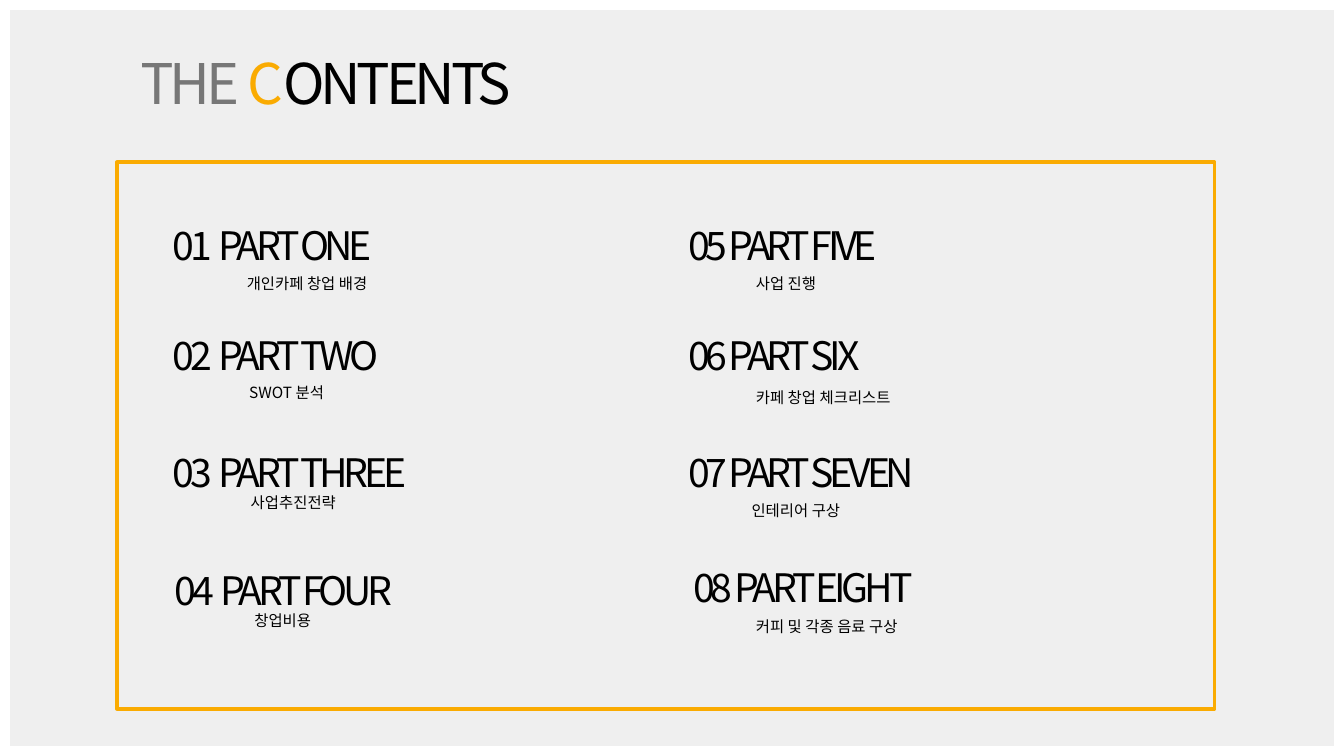
from lxml import etree
from pptx import Presentation
from pptx import util as u
from pptx.dml.color import RGBColor
from pptx.enum import shapes, text
from pptx.oxml.ns import qn

BLACK = RGBColor(0x00, 0x00, 0x00)
WHITE = RGBColor(0xFF, 0xFF, 0xFF)
ORANGE = RGBColor(0xFA, 0xAB, 0x01)
GREY = RGBColor(0xEF, 0xEF, 0xEF)
FONT = "Noto Sans CJK KR"
WIDTH, HEIGHT = 33.87, 19.05
PANEL = (2.95, 4.09, 27.66, 13.77)  # left, top, width, height in cm

# Number, heading, caption, heading (x, y) in its column, caption offset (x, y)
LEFT_PARTS = [
    ("01", "PART ONE", "개인카페 창업 배경", (0, 1.37), (1.86, 1.32)),
    ("02", "PART TWO", "SWOT 분석", (0, 4.14), (1.92, 1.3)),
    ("03", "PART THREE", "사업추진전략", (0, 7.08), (1.96, 1.12)),
    ("04", "PART FOUR", "창업비용", (0.05, 10.06), (2, 1.12)),
]
RIGHT_PARTS = [
    ("05", "PART FIVE", "사업 진행", (0, 1.37), (1.71, 1.32)),
    ("06", "PART SIX", "카페 창업 체크리스트", (0, 4.14), (1.71, 1.42)),
    ("07", "PART SEVEN", "인테리어 구상", (0, 7.07), (1.6, 1.35)),
    ("08", "PART EIGHT", "커피 및 각종 음료 구상", (0.13, 9.98), (1.58, 1.35)),
]


def format_span(span, size, color=BLACK, spacing=0):
    span.font.size = u.Pt(size)
    span.font.name = FONT
    span.font.color.rgb = color
    props = span.font._element
    etree.SubElement(props, qn("a:ea")).set("typeface", FONT)
    if spacing:
        props.set("spc", str(spacing * 100))


def add_text(page, left, top, width, height, words, size, spacing=0):
    box = page.shapes.add_textbox(u.Cm(left), u.Cm(top), u.Cm(width), u.Cm(height))
    box.text_frame.word_wrap = True
    para = box.text_frame.paragraphs[0]
    para.text = words
    format_span(para.runs[0], size, spacing=spacing)
    return para


def add_title(page, left, top, width, height):
    title = page.shapes.title
    title.left, title.top = u.Cm(left), u.Cm(top)
    title.width, title.height = u.Cm(width), u.Cm(height)
    frame = title.text_frame
    frame.word_wrap = True
    frame.auto_size = text.MSO_AUTO_SIZE.NONE
    frame.vertical_anchor = text.MSO_ANCHOR.TOP
    para = frame.paragraphs[0]
    para.alignment = text.PP_ALIGN.CENTER
    for words, color in (("THE ", BLACK), ("C", ORANGE), ("ONTENTS", BLACK)):
        span = para.add_run()
        span.text = words
        format_span(span, 40, color, spacing=-3)
    # The first word is half transparent
    tint = para.runs[0].font._element.find(".//" + qn("a:srgbClr"))
    etree.SubElement(tint, qn("a:alpha")).set("val", "50000")


def add_panel(page, left, top, width, height):
    panel = page.shapes.add_shape(shapes.MSO_SHAPE.RECTANGLE, u.Cm(left), u.Cm(top),
                                  u.Cm(width), u.Cm(height))
    panel.shadow.inherit = False
    panel.fill.background()
    panel.line.color.rgb = ORANGE
    panel.line.width = u.Pt(2.75)


def add_column(page, left, top, parts, number_width):
    for number, heading, caption, (x, y), (dx, dy) in parts:
        para = add_text(page, left + x, top + y, 8.2, 1.45,
                        f"{number}\t{heading}", 28, spacing=-3)
        # A tab stop sets the gap after the number
        stops = etree.SubElement(para._p.get_or_add_pPr(), qn("a:tabLst"))
        stop = etree.SubElement(stops, qn("a:tab"))
        stop.set("pos", str(u.Cm(number_width)))
        stop.set("algn", "l")
        add_text(page, left + x + dx, top + y + dy, 4.8, 0.74, caption, 11)


def add_border(page, left, top, width, height):
    border = page.shapes.add_shape(shapes.MSO_SHAPE.FRAME, u.Cm(left), u.Cm(top),
                                   u.Cm(width), u.Cm(height))
    border.adjustments[0] = 0.013
    border.shadow.inherit = False
    border.fill.solid()
    border.fill.fore_color.rgb = WHITE
    border.line.fill.background()


def build_contents(deck):
    page = deck.slides.add_slide(deck.slide_layouts[5])
    page.background.fill.solid()
    page.background.fill.fore_color.rgb = GREY
    left, top, _, _ = PANEL
    add_panel(page, *PANEL)
    add_title(page, 2.92, 1.09, 10.59, 1.96)
    add_border(page, 0, 0, WIDTH, HEIGHT)
    add_column(page, left + 1.16, top, LEFT_PARTS, 1.14)
    add_column(page, left + 14.14, top, RIGHT_PARTS, 1.03)


def main():
    deck = Presentation()
    deck.slide_width, deck.slide_height = u.Cm(WIDTH), u.Cm(HEIGHT)
    build_contents(deck)
    deck.save("out.pptx")


if __name__ == "__main__":
    main()
